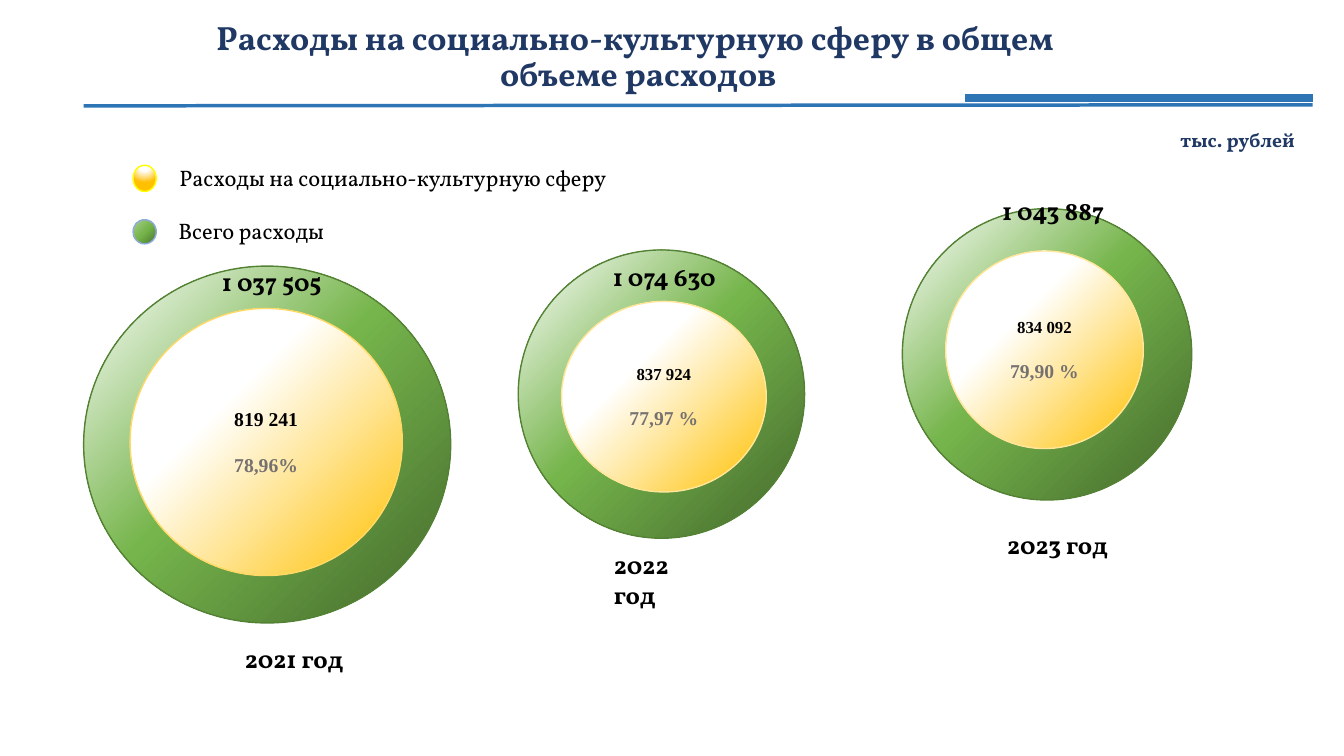
from pptx import Presentation
from pptx.dml.color import RGBColor as RGB
from pptx.enum.shapes import MSO_CONNECTOR as Conn, MSO_SHAPE as Shape
from pptx.enum.text import MSO_ANCHOR as Anchor, PP_ALIGN as Align
from pptx.oxml import parse_xml
from pptx.oxml.ns import nsdecls, qn
from pptx.util import Inches, Pt

COLORS = {
    "navy": "203864", "blue": "2E75B6", "black": "000000", "gray": "767171",
    "rim": "548235", "gold": "FFD966", "cream": "FFE699",
    "yellow": "FFFF00", "sky": "8FAADC",
}
GREEN = [(0, "FFFFFF"), (46, "76B54C"), (100, "43682B")]
AMBER = [(0, "FFFFFF"), (35, "FFFFFF"), (100, "FFC000")]
LEAF = [(0, "4B7430"), (48, "74B349"), (100, "A9D18E")]


def radial(left, top, right, bottom):
    """Circular gradient focused on the given rectangle, in percent."""
    return (f'<a:path path="circle"><a:fillToRect l="{left * 1000}" t="{top * 1000}" '
            f'r="{right * 1000}" b="{bottom * 1000}"/></a:path>')


CORNER = radial(0, 0, 100, 100)
MIDDLE = radial(50, -80, 50, 180)
SLANT = f'<a:lin ang="{225 * 60000}" scaled="0"/>'


class Deck:
    """Holds the text style and the current slide."""
    serif, body = "Vollkorn", "Times New Roman"

    def __init__(self):
        self.prs = Presentation()
        self.prs.slide_width, self.prs.slide_height = Inches(13.33), Inches(7.5)
        self.slide = self.prs.slides.add_slide(self.prs.slide_layouts[6])

    def run(self, par, text, size, color="black", bold=True, font=serif):
        run = par.add_run()
        run.text = text
        face = run.font
        face.name, face.size, face.bold = font, Pt(size), bold
        face.color.rgb = RGB.from_string(COLORS[color])

    def text(self, box, lines, size, color="black", bold=True,
             align=Align.LEFT, wrap=True, anchor=Anchor.TOP, pitch=None):
        frame = self.slide.shapes.add_textbox(*map(Inches, box)).text_frame
        frame.word_wrap, frame.vertical_anchor = wrap, anchor
        par = frame.paragraphs[0]
        par.alignment, par.line_spacing = align, pitch
        for i, line in enumerate(lines):
            if i:
                par.add_line_break()
            self.run(par, line, size, color, bold)

    def disc(self, box, stops, shade, edge):
        """Ellipse with a gradient fill."""
        disc = self.slide.shapes.add_shape(Shape.OVAL, *map(Inches, box))
        disc.shadow.inherit = False
        disc.fill.background()
        marks = "".join(f'<a:gs pos="{pos * 1000}"><a:srgbClr val="{rgb}"/></a:gs>'
                        for pos, rgb in stops)
        props = disc._element.spPr
        props.replace(props.find(qn("a:noFill")), parse_xml(
            f'<a:gradFill {nsdecls("a")} rotWithShape="1">'
            f'<a:gsLst>{marks}</a:gsLst>{shade}</a:gradFill>'))
        disc.line.color.rgb = RGB.from_string(COLORS[edge])
        disc.line.width = Pt(1)
        return disc

    def share(self, box, edge, value, size, rate):
        """Inner disc with the amount and its share of the total."""
        frame = self.disc(box, AMBER, CORNER, edge).text_frame
        frame.word_wrap, frame.vertical_anchor = True, Anchor.MIDDLE
        top, low = frame.paragraphs[0], frame.add_paragraph()
        top.alignment = low.alignment = Align.CENTER
        low.space_before = Pt(16)
        self.run(top, value, size, font=self.body)
        self.run(low, rate, 14, "gray", font=self.body)

    def rule(self, start, end, width):
        line = self.slide.shapes.add_connector(
            Conn.STRAIGHT, *map(Inches, start + end))
        line.line.color.rgb = RGB.from_string(COLORS["blue"])
        line.line.width = Pt(width)
        line._element.spPr.append(parse_xml(f'<a:effectLst {nsdecls("a")}/>'))


# outer disc, inner disc, edge, amount, size, share, total, its box, align, year, its box, wrap
YEARS = [
    ((0.83, 2.64, 3.64, 3.54), (1.29, 3.06, 2.7, 2.65), "gold",
     "819 241", 14, "78,96%", "1 037 505", (1.95, 2.59, 1.49, 0.4), Align.CENTER,
     "2021 год", (2.33, 6.33, 1.18, 0.4), False),
    ((5.14, 2.48, 2.84, 2.86), (5.57, 2.99, 2.03, 1.89), "cream",
     "837 924", 12, "77,97 %", "1 074 630", (5.98, 2.54, 1.5, 0.4), Align.LEFT,
     "2022 год", (5.99, 5.4, 1.18, 0.4), True),
    ((8.95, 2.07, 2.87, 2.89), (9.38, 2.49, 1.96, 1.96), "cream",
     "834 092", 12, "79,90 %", "1 043 887", (9.84, 1.89, 1.27, 0.4), Align.LEFT,
     "2023 год", (9.89, 5.2, 1.24, 0.4), True),
]


def main():
    deck = Deck()
    deck.text((1.17, 0.08, 10.32, 0.98),
              ["Расходы на социально-культурную сферу в общем ", "объеме расходов"],
              24, "navy", align=Align.CENTER, anchor=Anchor.MIDDLE, pitch=0.9)
    for (outer, inner, edge, value, size, rate,
         total, spot, align, year, place, wrap) in YEARS:
        deck.disc(outer, GREEN, CORNER, "rim")
        deck.share(inner, edge, value, size, rate)
        deck.text(spot, [total], 18, align=align)
        deck.text(place, [year], 18, wrap=wrap)

    deck.disc((1.32, 1.64, 0.23, 0.26), AMBER, MIDDLE, "yellow")
    deck.text((1.68, 1.58, 5.31, 0.37), ["Расходы на социально-культурную сферу"],
              16, bold=False)
    deck.disc((1.32, 2.18, 0.23, 0.24), LEAF, SLANT, "sky")
    deck.text((1.67, 2.11, 1.69, 0.37), ["Всего расходы"], 16, bold=False, wrap=False)
    deck.text((11.61, 1.22, 1.37, 0.34), ["тыс. рублей"], 14, "navy", wrap=False)

    deck.rule((9.57, 0.97), (13.02, 0.97), 6)
    deck.rule((0.83, 1.05), (13.02, 1.04), 2.5)
    deck.prs.save("out.pptx")


if __name__ == "__main__":
    main()
